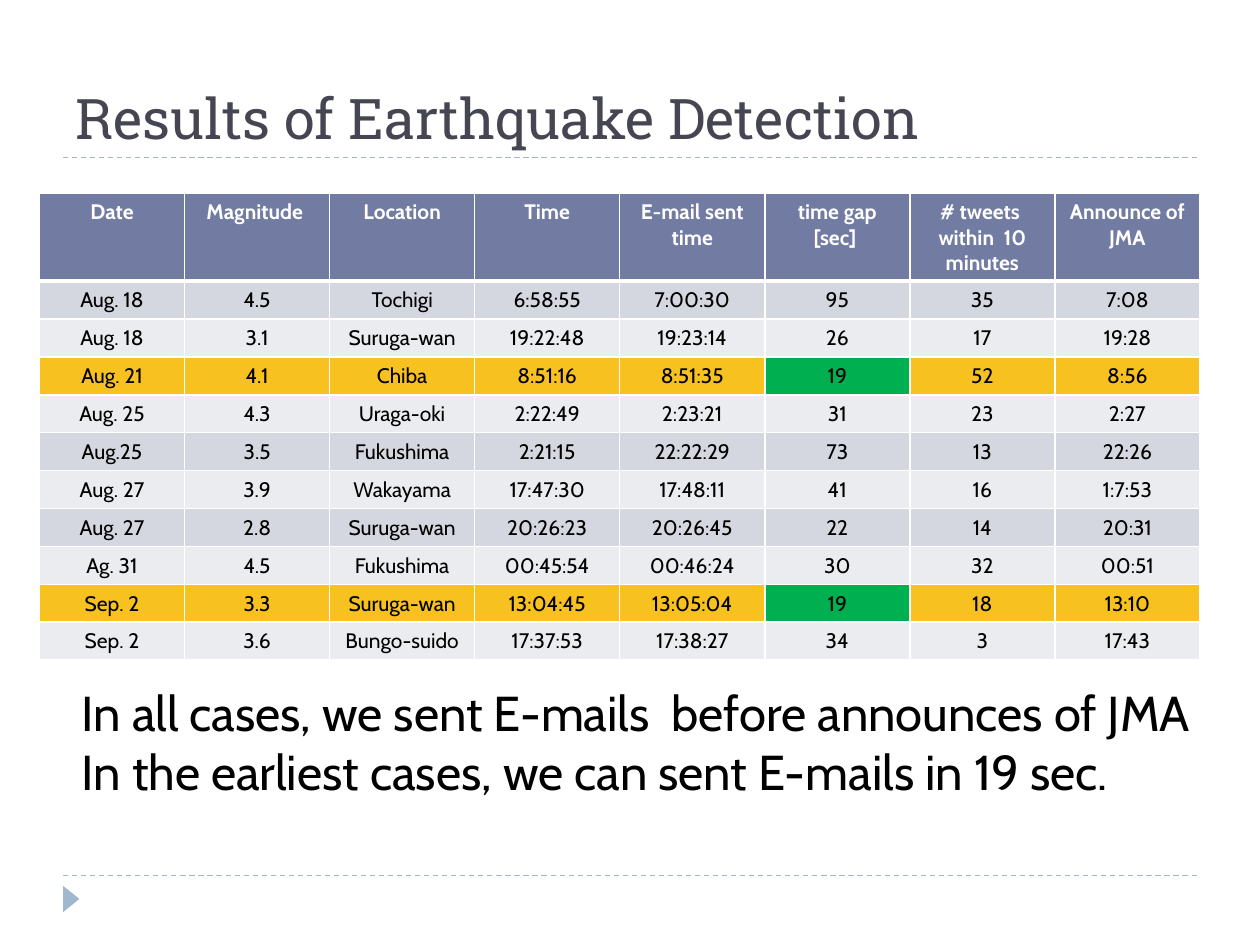
import pptx
import pptx.util
import pptx.dml.color
import pptx.enum.dml
import pptx.enum.shapes
import pptx.enum.text
import pptx.oxml
import pptx.oxml.ns
from pptx.util import Pt


def rgb(value):
    return pptx.dml.color.RGBColor.from_string(value)


def add_run(p, text, size, font, color, bold=False):
    r = p.add_run()
    r.text = text
    r.font.size = Pt(size)
    r.font.name = font
    r.font.bold = bold
    r.font.color.rgb = rgb(color)


prs = pptx.Presentation()
prs.slide_width, prs.slide_height = Pt(720), Pt(540)
s = prs.slides.add_slide(prs.slide_layouts[5])
ns = pptx.oxml.ns.nsdecls("a")

for y in (500.4, 90):
    line = s.shapes.add_connector(
        pptx.enum.shapes.MSO_CONNECTOR.STRAIGHT, Pt(36), Pt(y), Pt(684), Pt(y))
    line.line.color.rgb = rgb("9FB8CD")
    line.line.width = Pt(0.75)
    line.line.dash_style = pptx.enum.dml.MSO_LINE.DASH
    line._element.spPr.append(pptx.oxml.parse_xml(f"<a:effectLst {ns}/>"))

sp = s.shapes.add_shape(
    pptx.enum.shapes.MSO_SHAPE.ISOSCELES_TRIANGLE, Pt(33.12), Pt(509.04), Pt(15.12), Pt(9.36))
sp.rotation = 90
sp.shadow.inherit = False
sp.fill.solid()
sp.fill.fore_color.rgb = rgb("9FB8CD")
sp.line.fill.background()

title = s.shapes.title
title.left, title.top, title.width, title.height = Pt(36), Pt(12.24), Pt(648), Pt(77.76)
tf = title.text_frame
tf.word_wrap = True
tf.vertical_anchor = pptx.enum.text.MSO_ANCHOR.BOTTOM
p = tf.paragraphs[0]
p.alignment = pptx.enum.text.PP_ALIGN.LEFT
add_run(p, "Results of Earthquake Detection", 32, "Roboto Slab", "464653")

tb = s.shapes.add_textbox(Pt(39.6), Pt(386.64), Pt(658.08), Pt(74.88))
tf = tb.text_frame
tf.word_wrap = True
tf.auto_size = pptx.enum.text.MSO_AUTO_SIZE.SHAPE_TO_FIT_TEXT
lines = ["In all cases, we sent E-mails  before announces of JMA",
         "In the earliest cases, we can sent E-mails in 19 sec."]
for i, text in enumerate(lines):
    p = tf.add_paragraph() if i else tf.paragraphs[0]
    add_run(p, text, 28, "Cabin", "000000")

rows = [
    ["Date", "Magnitude ", "Location", "Time", "E-mail sent time", "time gap\n[sec] ",
     "# tweets  within  10 minutes", "Announce of JMA"],
    ["Aug. 18", "4.5", "Tochigi", "6:58:55", "7:00:30", "95", "35", "7:08"],
    ["Aug. 18", "3.1", "Suruga-wan", "19:22:48", "19:23:14", "26", "17", "19:28"],
    ["Aug. 21", "4.1", "Chiba", "8:51:16", "8:51:35", "19", "52", "8:56"],
    ["Aug. 25", "4.3", "Uraga-oki", "2:22:49", "2:23:21", "31", "23", "2:27"],
    ["Aug.25", "3.5", "Fukushima", "2:21:15", "22:22:29", "73", "13", "22:26"],
    ["Aug. 27", "3.9", "Wakayama", "17:47:30", "17:48:11", "41", "16", "1:7:53"],
    ["Aug. 27", "2.8", "Suruga-wan", "20:26:23", "20:26:45", "22", "14", "20:31"],
    ["Ag. 31", "4.5", "Fukushima", "00:45:54", "00:46:24", "30", "32", "00:51"],
    ["Sep. 2", "3.3", "Suruga-wan", "13:04:45", "13:05:04", "19", "18", "13:10"],
    ["Sep. 2", "3.6", "Bungo-suido", "17:37:53", "17:38:27", "34", "3", "17:43"],
]
gap_col = 5
table = s.shapes.add_table(
    len(rows), len(rows[0]), Pt(22.6), Pt(110.2), Pt(663.2), Pt(266.4)).table
for col in table.columns:
    col.width = Pt(82.9)
for i, row in enumerate(rows):
    header = i == 0
    fastest = row[gap_col] == "19"
    table.rows[i].height = Pt(49.8 if header else 21.66)
    for j, text in enumerate(row):
        cell = table.cell(i, j)
        if header:
            fill = "727CA3"
        elif fastest:
            fill = "00B050" if j == gap_col else "F7C120"
        else:
            fill = "D5D7E0" if i % 2 else "EBECF0"
        for k, part in enumerate(text.split("\n")):
            p = cell.text_frame.add_paragraph() if k else cell.text_frame.paragraphs[0]
            p.alignment = pptx.enum.text.PP_ALIGN.CENTER
            add_run(p, part, 12, "Cabin", "FFFFFF" if header else "000000", header)
        tcPr = cell._tc.get_or_add_tcPr()
        for side in "LRTB":
            thick = (header and side == "B") or (i == 1 and side == "T")
            tcPr.append(pptx.oxml.parse_xml(
                f'<a:ln{side} {ns} w="{Pt(3 if thick else 1)}"><a:solidFill>'
                f'<a:srgbClr val="FFFFFF"/></a:solidFill></a:ln{side}>'))
        cell.fill.solid()
        cell.fill.fore_color.rgb = rgb(fill)

prs.save("out.pptx")
